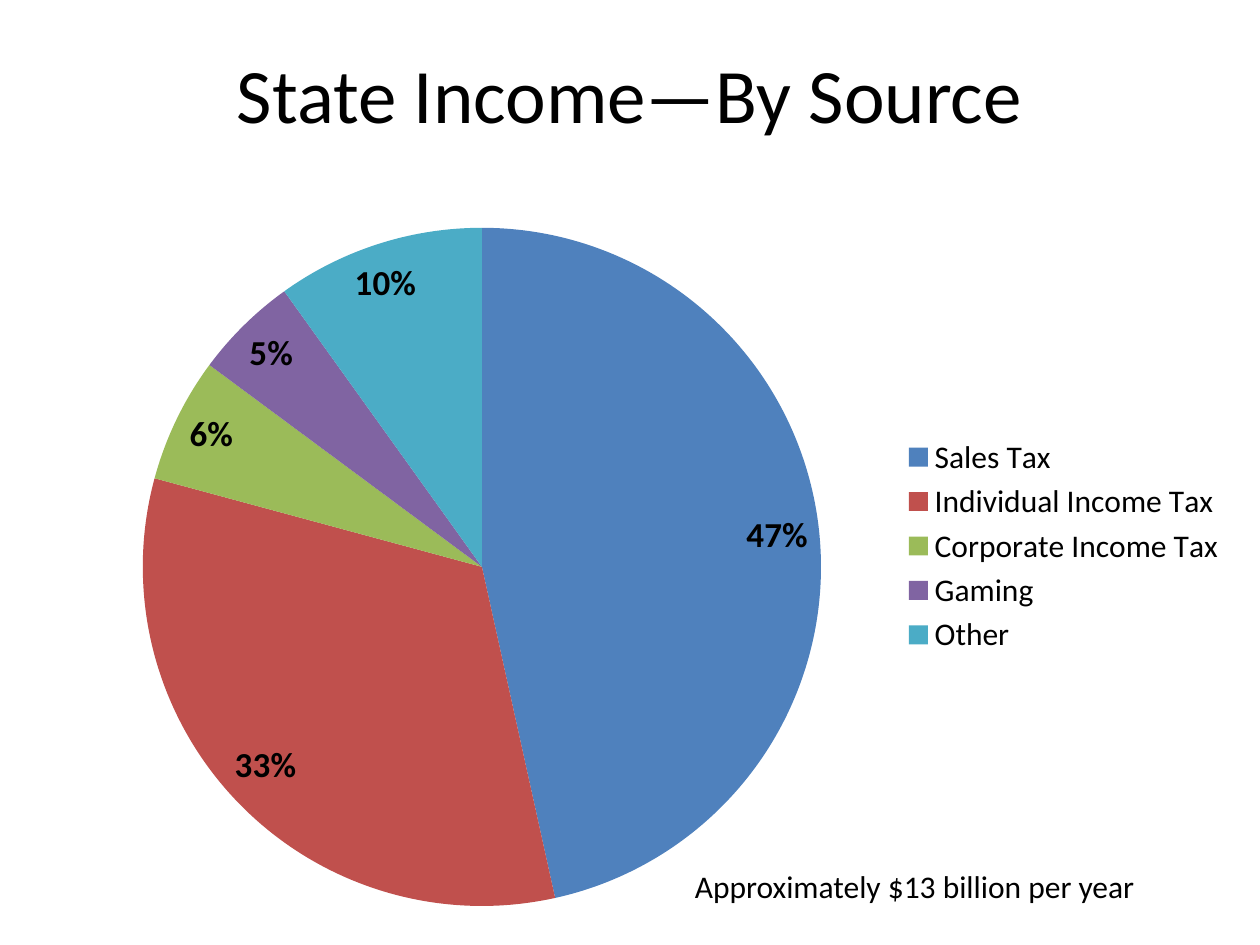
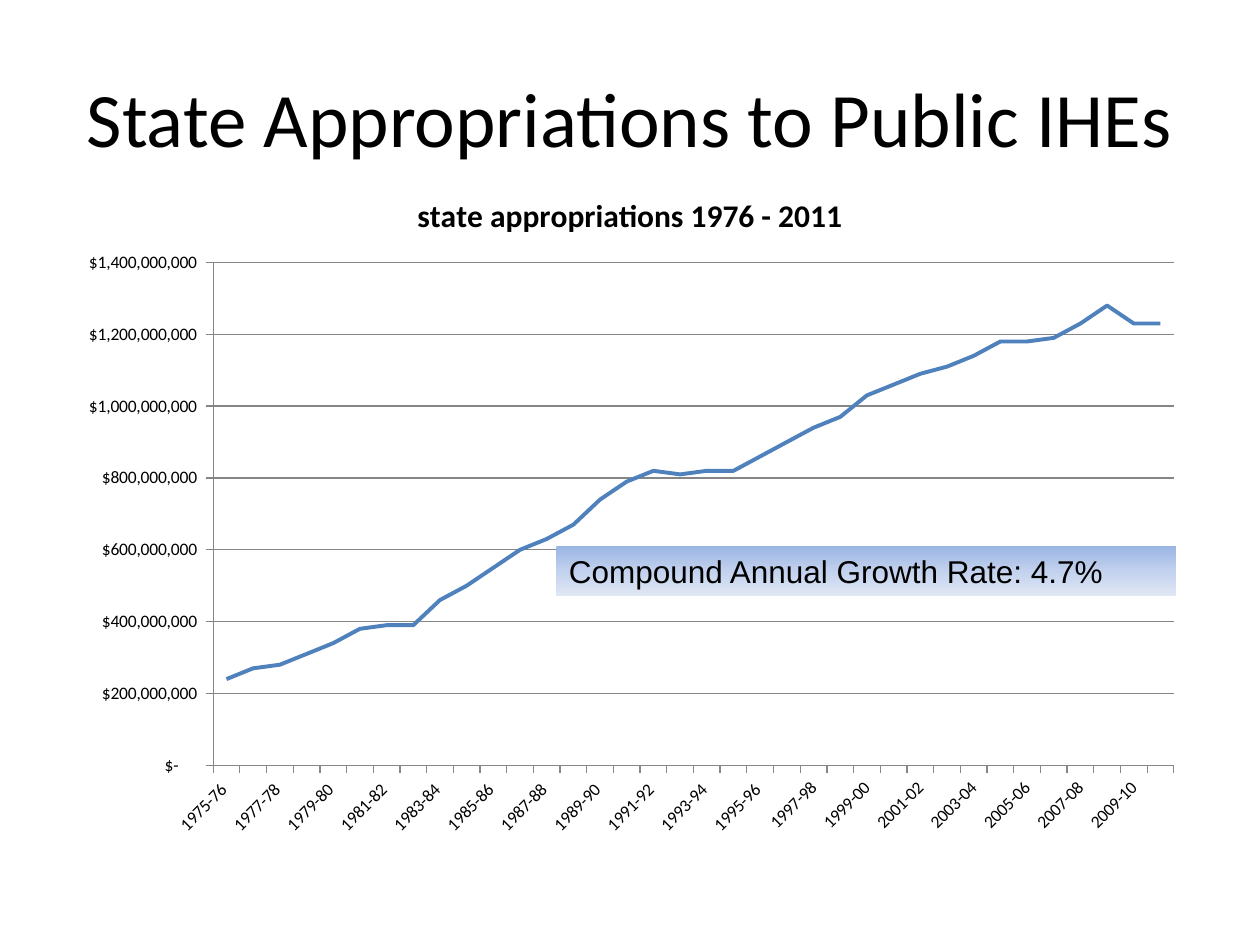
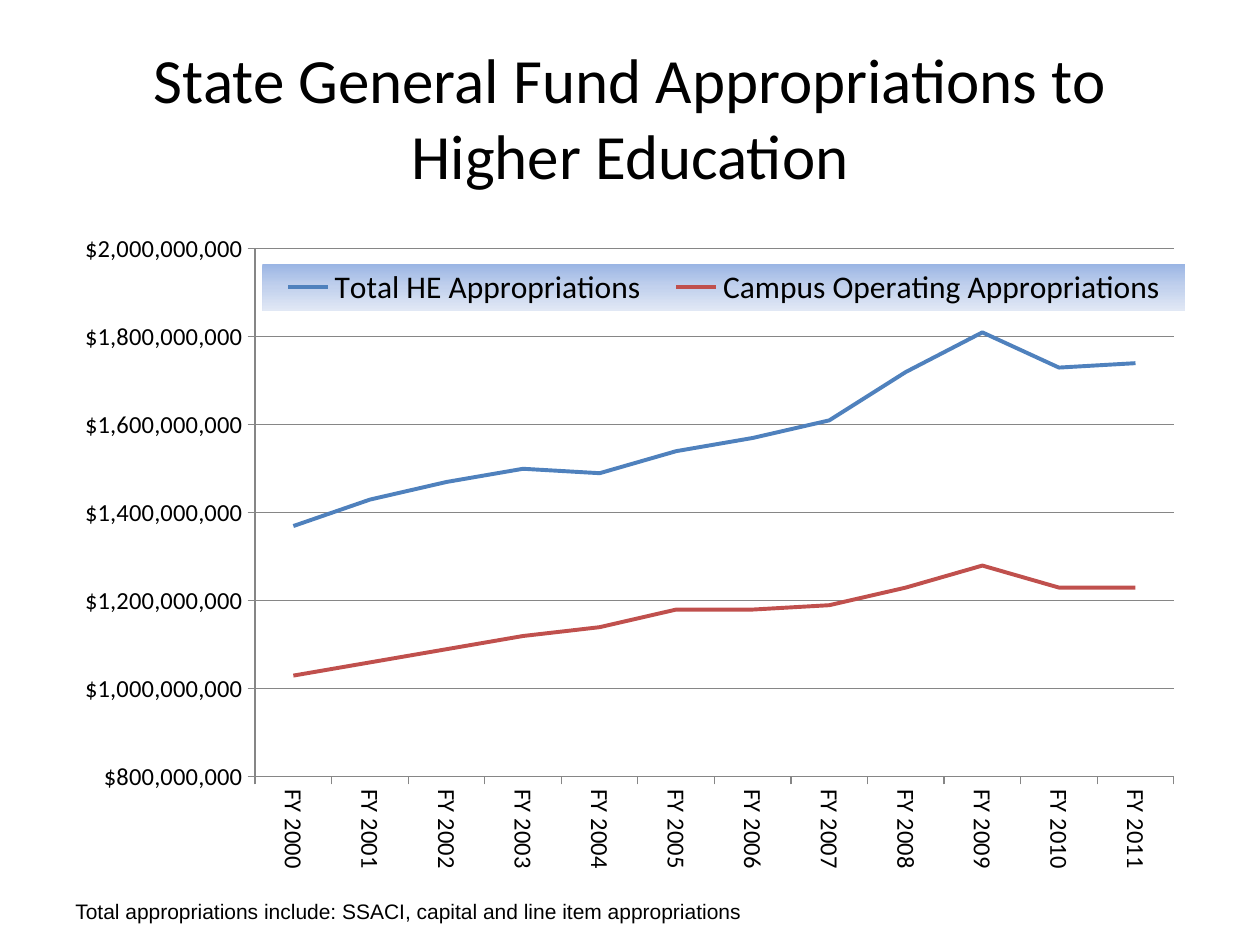
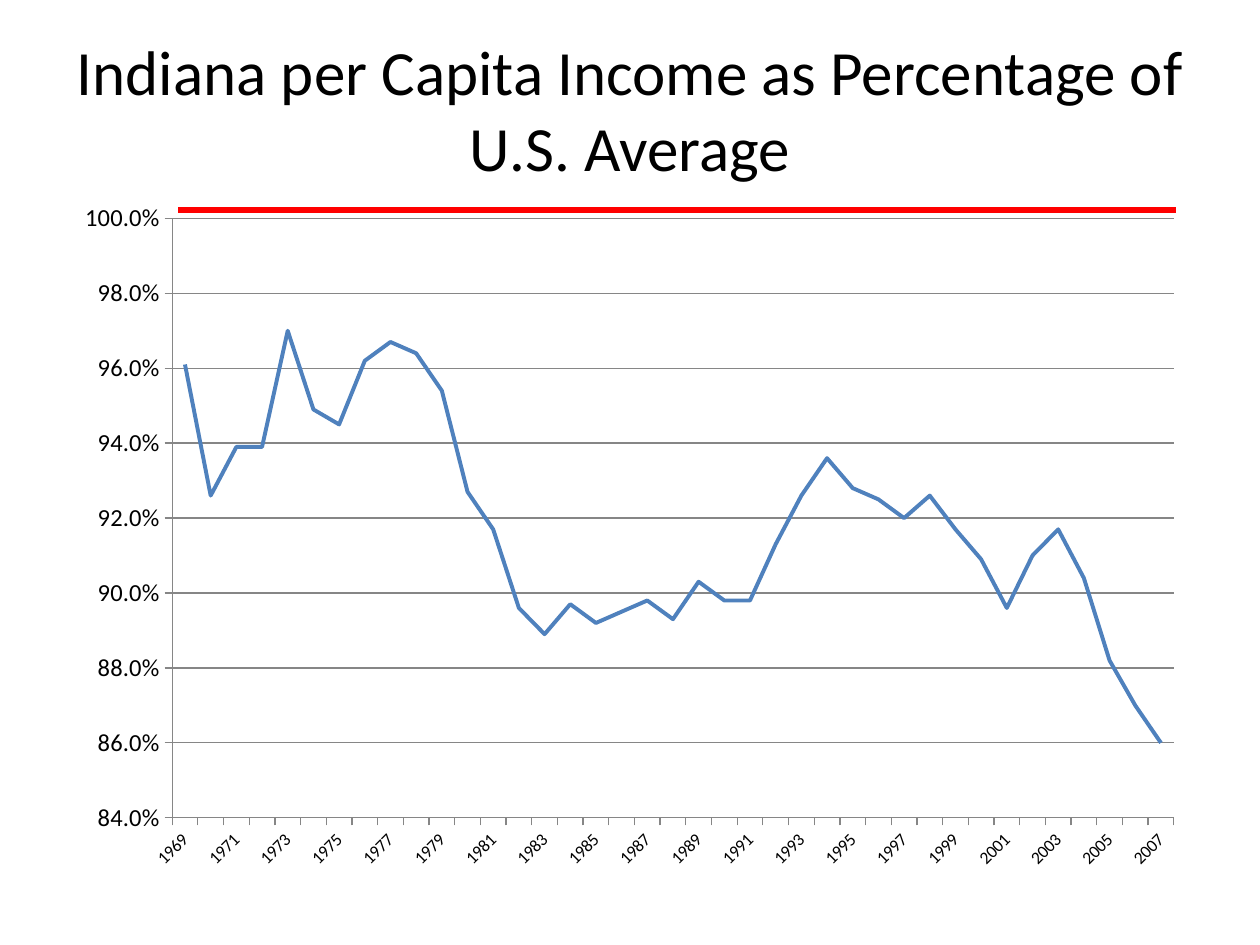
from pptx import Presentation
from pptx.chart.data import CategoryChartData as Data
from pptx.dml.color import RGBColor as Rgb
from pptx.enum.chart import XL_CHART_TYPE as Kind, XL_LABEL_POSITION as Spot
from pptx.enum.chart import XL_LEGEND_POSITION as Side, XL_TICK_MARK as Tick
from pptx.enum.shapes import MSO_CONNECTOR as Link, MSO_SHAPE as Form
from pptx.enum.text import MSO_ANCHOR as Anchor, MSO_AUTO_SIZE as Auto, PP_ALIGN as Align
from pptx.oxml import parse_xml as parse
from pptx.oxml.ns import nsdecls, qn
from pptx.util import Pt

PX = 7620  # 120 px to the inch
BLACK = Rgb(0, 0, 0)
GRAY = Rgb(0x86, 0x86, 0x86)
LINE = Rgb(0xFF, 0, 0)
BLUE = Rgb(0x4F, 0x81, 0xBD)
RED = Rgb(0xC0, 0x50, 0x4D)
GREEN = Rgb(0x9B, 0xBB, 0x59)
PURPLE = Rgb(0x80, 0x64, 0xA2)
TEAL = Rgb(0x4B, 0xAC, 0xC6)
HUES = [BLUE, RED, GREEN, PURPLE, TEAL]

# Pale blue gradient shared by the growth band and the legend
STOPS = "".join(f'<a:gs pos="{at}"><a:srgbClr val="{hue}"/></a:gs>' for at, hue in
                [(0, "9AB5E4"), (50000, "C2D1ED"), (100000, "E1E8F5")])
GRAD = (f'<a:gradFill {nsdecls("a")}><a:gsLst>{STOPS}</a:gsLst>'
        '<a:lin ang="5400000" scaled="0"/></a:gradFill>')
AREA = (f'<c:layout {nsdecls("c")}><c:manualLayout>%s'
        '<c:xMode val="edge"/><c:yMode val="edge"/><c:x val="%s"/><c:y val="%s"/>'
        '<c:w val="%s"/><c:h val="%s"/></c:manualLayout></c:layout>')


def write(shape, words, size, face="Calibri", head=False):
    frame = shape.text_frame
    frame.word_wrap = True
    frame.auto_size = Auto.NONE if head else Auto.SHAPE_TO_FIT_TEXT
    frame.vertical_anchor = Anchor.MIDDLE if head else Anchor.TOP
    para = frame.paragraphs[0]
    para.text = words
    para.alignment = Align.CENTER if head else Align.LEFT
    para.font.size, para.font.name = Pt(size), face
    para.font.color.rgb = BLACK


def place(node, after, box, part, target=""):
    """Set a chart part, given in slide px, as shares of the chart box."""
    for old in node.findall(qn("c:layout")):
        node.remove(old)
    x, y, wide, high = box
    shares = ((part[0] - x) / wide, (part[1] - y) / high, part[2] / wide, part[3] / high)
    layout = parse(AREA % (target, *shares))
    if after is None:
        node.insert(0, layout)
    else:
        after.addnext(layout)


deck = Presentation()
deck.slide_width, deck.slide_height = 1200 * PX, 900 * PX

# Pages and titles
pages = []
for words, size, high in [
        ("State Income—By Source", 44, 104),
        ("State Appropriations to Public IHEs", 44, 150),
        ("State General Fund Appropriations to Higher Education", 36, 150),
        ("Indiana per Capita Income as Percentage of U.S. Average", 36, 134)]:
    page = deck.slides.add_slide(deck.slide_layouts[6])
    box = page.shapes.add_textbox(60 * PX, 36 * PX, 1080 * PX, high * PX)
    write(box, words, size, head=True)
    pages.append(page)
income, growth, funds, capita = pages

# Chart values; dollars are listed in millions
state = [240, 270, 280, 310, 340, 380, 390, 390, 460, 500, 550, 600,
         630, 670, 740, 790, 820, 810, 820, 820, 860, 900, 940, 970,
         1030, 1060, 1090, 1110, 1140, 1180, 1180, 1190, 1230, 1280, 1230, 1230]
total = [1370, 1430, 1470, 1500, 1490, 1540, 1570, 1610, 1720, 1810, 1730, 1740]
campus = [1030, 1060, 1090, 1120, 1140, 1180, 1180, 1190, 1230, 1280, 1230, 1230]
state, total, campus = [[n * 10**6 for n in row] for row in (state, total, campus)]
share = [0.961, 0.926, 0.939, 0.939, 0.97, 0.949, 0.945, 0.962, 0.967, 0.964,
         0.954, 0.927, 0.917, 0.896, 0.889, 0.897, 0.892, 0.895, 0.898, 0.893,
         0.903, 0.898, 0.898, 0.913, 0.926, 0.936, 0.928, 0.925, 0.92, 0.926,
         0.917, 0.909, 0.896, 0.91, 0.917, 0.904, 0.882, 0.87, 0.86]
terms = [f"{y}-{(y + 1) % 100:02}" + (" " if y < 1997 else "") for y in range(1975, 2011)]

# Charts: page, kind, box, plot area, categories, rows
charts = []
for page, kind, box, area, cats, rows in [
        (income, Kind.PIE, (30, 160, 1150, 720), (136, 217, 646, 646),
         ["Sales Tax", "Individual Income Tax", "Corporate Income Tax", "Gaming", "Other"],
         [("Series 1", [0.47, 0.33, 0.06, 0.05, 0.1])]),
        (growth, Kind.LINE, (60, 160, 1080, 648), (203, 250, 915, 479),
         terms, [("Series 1", state)]),
        (funds, Kind.LINE, (60, 210, 1080, 630), (243, 237, 875, 503),
         [f"FY {y}" for y in range(2000, 2012)],
         [("Total HE Appropriations", total), ("Campus Operating Appropriations", campus)]),
        (capita, Kind.LINE, (60, 180, 1080, 660), (164, 208, 954, 571),
         [str(y) for y in range(1969, 2008)], [("Series 1", share)])]:
    data = Data()
    data.categories = cats
    for name, vals in rows:
        data.add_series(name, vals)
    chart = page.shapes.add_chart(kind, *[n * PX for n in box], data).chart
    chart.font.size, chart.font.name = Pt(10), "Calibri"
    chart.font.color.rgb = BLACK
    chart.has_title = chart.has_legend = False
    chart.plots[0].vary_by_categories = kind == Kind.PIE
    node = chart._chartSpace.find(".//" + qn("c:plotArea"))
    place(node, None, box, area, '<c:layoutTarget val="inner"/>')
    charts.append(chart)
pie, *lines = charts

# Pie slices, labels, legend and caption
plot = pie.plots[0]
for i, hue in enumerate(HUES):
    fill = plot.series[0].points[i].format.fill
    fill.solid()
    fill.fore_color.rgb = hue
plot.has_data_labels = True
tags = plot.data_labels
tags.show_value = True
tags.number_format, tags.number_format_is_linked = "0%", False
tags.position = Spot.BEST_FIT
tags.font.size, tags.font.bold = Pt(20), True
pie.has_legend = True
pie.legend.position = Side.RIGHT
pie.legend.include_in_layout = False
pie.legend.font.size = Pt(18)
note = income.shapes.add_textbox(650 * PX, 820 * PX, 500 * PX, 48 * PX)
write(note, "Approximately $13 billion per year", 18)

# Line charts: format, low, top, label sizes, turn, skip
for chart, (form, low, top, vsize, csize, turn, skip) in zip(lines, [
        (r'_("$"* #,##0_);_("$"* \(#,##0\);_("$"* "-"??_);_(@_)', None, None, 10, 10, -45, 2),
        ('"$"#,##0', 800 * 10**6, None, 14, 14, 90, 1),
        ("0.0%", 0.84, 1, 14, 10, -45, 2)]):
    for row, hue in zip(chart.plots[0].series, HUES):
        row.smooth = False
        row.format.line.width = Pt(2.25)
        row.format.line.color.rgb = hue
    cat, val = chart.category_axis, chart.value_axis
    for axis, size in [(cat, csize), (val, vsize)]:
        axis.major_tick_mark = Tick.OUTSIDE
        axis.minor_tick_mark = Tick.NONE
        axis.format.line.color.rgb = GRAY
        axis.tick_labels.font.size = Pt(size)
    val.has_major_gridlines = True
    val.major_gridlines.format.line.color.rgb = GRAY
    val.tick_labels.number_format = form
    val.tick_labels.number_format_is_linked = False
    if low is not None:
        val.minimum_scale = low
    if top is not None:
        val.maximum_scale = top
    node = cat._element
    node.find(".//" + qn("a:bodyPr")).set("rot", str(turn * 60000))
    gap = parse(f'<c:tickLblSkip {nsdecls("c")} val="{skip}"/>')
    node.find(qn("c:noMultiLvlLbl")).addprevious(gap)

# Growth chart heading and band
head = lines[0].chart_title
head.include_in_layout = False
para = head.text_frame.paragraphs[0]
para.text = "state appropriations 1976 - 2011"
para.font.size, para.font.bold = Pt(18), True
band = growth.shapes.add_shape(Form.RECTANGLE, 530 * PX, 520 * PX, 590 * PX, 48 * PX)
band.shadow.inherit = False
band.line.fill.background()
band._element.spPr.find(qn("a:prstGeom")).addnext(parse(GRAD))
write(band, "Compound Annual Growth Rate: 4.7%", 18, "Arial")

# Fund chart legend and footnote
lines[1].has_legend = True
key = lines[1].legend
key.position = Side.TOP
key.include_in_layout = True
key.font.size = Pt(18)
node = key._element
place(node, node.find(qn("c:legendPos")), (60, 210, 1080, 630), (250, 251, 879, 45))
node.find(qn("c:overlay")).addnext(parse(f'<c:spPr {nsdecls("c")}>{GRAD}</c:spPr>'))
note = funds.shapes.add_textbox(60 * PX, 850 * PX, 1080 * PX, 36 * PX)
write(note, "Total appropriations include: SSACI, capital and line item appropriations", 12, "Arial")

# U.S. average line
rule = capita.shapes.add_connector(Link.STRAIGHT, 170 * PX, 200 * PX, 1120 * PX, 200 * PX)
rule.line.color.rgb = LINE
rule.line.width = Pt(3)
rule._element.spPr.append(parse(f'<a:effectLst {nsdecls("a")}/>'))

deck.save("out.pptx")
